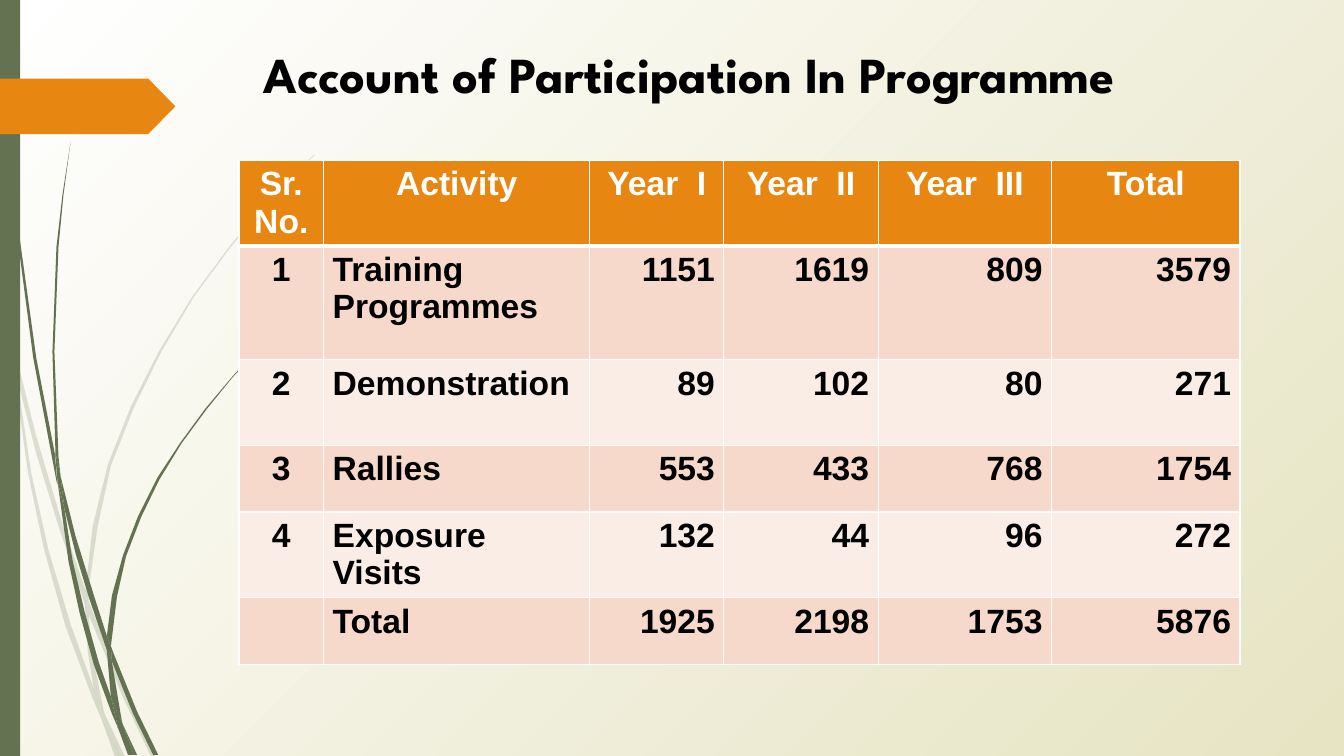
from pptx import Presentation
from pptx.dml.color import RGBColor
from pptx.enum.shapes import MSO_SHAPE as Preset
from pptx.enum.text import MSO_ANCHOR as Anchor, PP_ALIGN as Align
from pptx.oxml import parse_xml
from pptx.oxml.ns import qn
from pptx.util import Inches, Pt

WHITE = RGBColor(0xFF, 0xFF, 0xFF)
BLACK = RGBColor(0, 0, 0)
SAND = RGBColor(0xE6, 0xE4, 0xC3)
MOSS = RGBColor(0x64, 0x72, 0x52)
ORANGE = RGBColor(0xE7, 0x87, 0x12)
PEACH = RGBColor(0xF6, 0xD9, 0xCA)
CREAM = RGBColor(0xFA, 0xED, 0xE6)
NAMESPACE = 'xmlns:a="http://schemas.openxmlformats.org/drawingml/2006/main"'
UNITS_PER_INCH = 1000

PALE_BLADES = [
    [(0.11, 3.5), (0.09, 3.22), (0, 2.82), (0, 2.99), (0.1, 3.44)],
    [(0.58, 5.22), (0.84, 5.99), (0.85, 5.86), (0.62, 5.2), (0.36, 4.33),
     (0.14, 3.45), (0.17, 3.76), (0.36, 4.5)],
    [(0.92, 6.07), (0.88, 5.96), (0.88, 6.1), (1.23, 6.94), (1.5, 7.51),
     (1.55, 7.51), (1.27, 6.92)],
    [(1.19, 7.51), (1.24, 7.51), (1.05, 7.11)],
    [(0.93, 6.83), (0.7, 6.19), (0.48, 5.45), (0.31, 4.69), (0.17, 3.76),
     (0.11, 3.5), (0.28, 4.7), (0.44, 5.46), (0.65, 6.21), (0.92, 6.93),
     (1.01, 7.14), (0.99, 7.07)],
    [(0.84, 5.99), (0.87, 6.46), (0.93, 6.83), (0.96, 6.92), (1.05, 7.11),
     (1.03, 7.06), (0.91, 6.46), (0.88, 6.1), (0.88, 6.08)],
    [(0.88, 5.84), (0.97, 5.22), (1.1, 4.62), (1.33, 4.04), (1.6, 3.49),
     (1.92, 2.95), (2.29, 2.45), (2.68, 1.98), (2.9, 1.75), (3.12, 1.54),
     (3.12, 1.53), (2.89, 1.75), (2.68, 1.97), (2.28, 2.44), (1.91, 2.94),
     (1.58, 3.48), (1.3, 4.03), (1.07, 4.61), (0.92, 5.22), (0.85, 5.84),
     (0.85, 5.86), (0.88, 5.96)],
    [(1.01, 7.14), (1.14, 7.51), (1.19, 7.51)],
    [(0.88, 6.08), (0.88, 6.1), (0.88, 5.96), (0.85, 5.86), (0.84, 5.99)],
    [(0.96, 6.92), (0.93, 6.83), (0.99, 7.07), (1.01, 7.14), (1.19, 7.51),
     (1.05, 7.11)],
]
DARK_BLADES = [
    [(0.07, 1.1), (0.17, 2.33), (0.33, 3.55), (0.56, 4.77), (0.57, 4.81),
     (0.55, 4.57), (0.55, 4.53), (0.36, 3.55), (0.19, 2.32), (0.08, 1.09),
     (0.05, 0.48), (0.04, 0), (0.03, 0), (0.04, 0.48)],
    [(0.88, 5.92), (1.06, 6.45), (1.06, 6.33), (1.06, 6.31), (0.93, 5.9),
     (0.75, 5.32), (0.6, 4.72), (0.64, 5.05), (0.75, 5.49)],
    [(1.13, 6.49), (1.1, 6.41), (1.11, 6.56), (1.32, 7.08), (1.52, 7.49),
     (1.57, 7.49), (1.36, 7.06)],
    [(1.1, 6.91), (0.98, 6.57), (0.84, 6.07), (0.72, 5.56), (0.64, 5.05),
     (0.57, 4.77), (0.68, 5.57), (0.79, 6.08), (0.93, 6.59), (1.11, 7.08),
     (1.17, 7.22), (1.16, 7.17)],
    [(0.6, 4.72), (0.58, 4.53), (0.54, 3.49), (0.58, 2.45), (0.63, 1.93),
     (0.7, 1.41), (0.62, 1.93), (0.56, 2.45), (0.52, 3.49), (0.55, 4.49)],
    [(1.33, 7.49), (1.36, 7.49), (1.22, 7.19)],
    [(0.57, 4.77), (0.64, 5.05), (0.6, 4.72), (0.55, 4.49), (0.55, 4.53)],
    [(1.11, 6.33), (1.16, 5.92), (1.25, 5.52), (1.4, 5.13), (1.58, 4.76),
     (1.8, 4.4), (2.05, 4.06), (2.31, 3.74), (2.45, 3.59), (2.61, 3.44),
     (2.6, 3.44), (2.45, 3.58), (2.31, 3.73), (2.04, 4.05), (1.79, 4.39),
     (1.56, 4.74), (1.37, 5.12), (1.22, 5.51), (1.11, 5.91), (1.06, 6.31),
     (1.1, 6.41)],
    [(1.17, 7.22), (1.27, 7.49), (1.31, 7.49)],
    [(1.06, 6.45), (1.1, 6.91), (1.16, 7.06), (1.22, 7.19), (1.21, 7.16),
     (1.11, 6.56), (1.09, 6.51)],
    [(1.06, 6.45), (1.09, 6.51), (1.11, 6.56), (1.1, 6.41), (1.06, 6.31)],
    [(1.16, 7.06), (1.1, 6.91), (1.16, 7.17), (1.17, 7.22), (1.3, 7.49),
     (1.33, 7.49), (1.22, 7.19)],
]

COLUMN_WIDTHS = [0.84, 2.64, 1.33, 1.53, 1.72, 1.87]
ROW_HEIGHTS = [0.85, 1.13, 0.85, 0.66, 0.85, 0.66]
ROWS = [
    ["Sr. No.", "Activity", "Year  I", "Year  II", "Year  III", "Total"],
    ["1", "Training Programmes", "1151", "1619", "809", "3579"],
    ["2", "Demonstration", "89", "102", "80", "271"],
    ["3", "Rallies", "553", "433", "768", "1754"],
    ["4", "Exposure Visits", "132", "44", "96", "272"],
    ["", "Total", "1925", "2198", "1753", "5876"],
]


def write_text(frame, text, font="Arial", size=24, color=BLACK, align=Align.LEFT):
    para = frame.paragraphs[0]
    para.alignment = align
    span = para.add_run()
    span.text = text
    span.font.name = font
    span.font.size = Pt(size)
    span.font.bold = True
    span.font.color.rgb = color


def paint(shape, color, opacity=100):
    shape.shadow.inherit = False
    shape.fill.solid()
    shape.fill.fore_color.rgb = color
    shape.line.fill.background()
    if opacity < 100:
        tint = shape._element.spPr.find(qn("a:solidFill"))[0]
        tint.append(parse_xml(f'<a:alpha {NAMESPACE} val="{opacity * 1000}"/>'))


def add_blade(page, left, top, outline, opacity):
    points = [(round((left + x) * UNITS_PER_INCH), round((top + y) * UNITS_PER_INCH))
              for x, y in outline]
    builder = page.shapes.build_freeform(*points[0], scale=Inches(1) / UNITS_PER_INCH)
    builder.add_line_segments(points[1:], close=True)
    paint(builder.convert_to_shape(), MOSS, opacity)


def add_background(page):
    page.background.fill.solid()
    solid = page.element.find(".//" + qn("a:solidFill"))
    solid.getparent().replace(solid, parse_xml(
        f'<a:gradFill {NAMESPACE} rotWithShape="1"><a:gsLst>'
        f'<a:gs pos="0"><a:srgbClr val="{WHITE}"/></a:gs>'
        f'<a:gs pos="100000"><a:srgbClr val="{SAND}"/></a:gs></a:gsLst>'
        '<a:path path="circle"><a:fillToRect r="100000" b="100000"/></a:path>'
        '</a:gradFill>'))


def add_side_art(page, left, top, height):
    for blades, opacity in ((PALE_BLADES, 20), (DARK_BLADES, 100)):
        for outline in blades:
            add_blade(page, left, top, outline, opacity)
    bar = page.shapes.add_shape(
        Preset.RECTANGLE, Inches(left), Inches(top), Inches(0.2), Inches(height))
    paint(bar, MOSS)
    tag = page.shapes.add_shape(
        Preset.PENTAGON, Inches(left), Inches(top + 0.78), Inches(1.74), Inches(0.55))
    tag.adjustments[0] = 0.49
    paint(tag, ORANGE)


def add_title(page, left, top, width, height):
    title = page.shapes.title
    title.left, title.top = Inches(left), Inches(top)
    title.width, title.height = Inches(width), Inches(height)
    title.text_frame.vertical_anchor = Anchor.TOP
    write_text(title.text_frame, "Account of Participation In Programme",
               font="League Spartan", size=36)


def add_borders(cell, **widths):
    properties = cell._tc.get_or_add_tcPr()
    for index, side in enumerate("LRTB"):
        properties.insert(index, parse_xml(
            f'<a:ln{side} {NAMESPACE} w="{Pt(widths.get(side, 1))}"><a:solidFill>'
            f'<a:srgbClr val="{WHITE}"/></a:solidFill></a:ln{side}>'))


def add_participation_table(page, left, top):
    table = page.shapes.add_table(
        len(ROWS), len(COLUMN_WIDTHS), Inches(left), Inches(top),
        Inches(sum(COLUMN_WIDTHS)), Inches(sum(ROW_HEIGHTS))).table
    for column, width in zip(table.columns, COLUMN_WIDTHS):
        column.width = Inches(width)
    for row, height in zip(table.rows, ROW_HEIGHTS):
        row.height = Inches(height)
    for r, texts in enumerate(ROWS):
        for c, text in enumerate(texts):
            cell = table.cell(r, c)
            cell.margin_left = cell.margin_right = Inches(0.09)
            cell.fill.solid()
            cell.fill.fore_color.rgb = ORANGE if r == 0 else (CREAM, PEACH)[r % 2]
            add_borders(cell, T=3 if r == 1 else 1, B=3 if r == 0 else 1)
            if text:
                align = (Align.CENTER if r == 0 or c == 0
                         else Align.LEFT if c == 1 else Align.RIGHT)
                write_text(cell.text_frame, text, align=align,
                           color=WHITE if r == 0 else BLACK)


def main():
    deck = Presentation()
    deck.slide_width, deck.slide_height = Inches(13.33), Inches(7.5)
    page = deck.slides.add_slide(deck.slide_layouts[5])
    add_background(page)
    add_side_art(page, 0, 0, 7.5)
    add_title(page, 2.51, 0.38, 10.05, 1.04)
    add_participation_table(page, 2.37, 1.59)
    deck.save("out.pptx")


if __name__ == "__main__":
    main()
